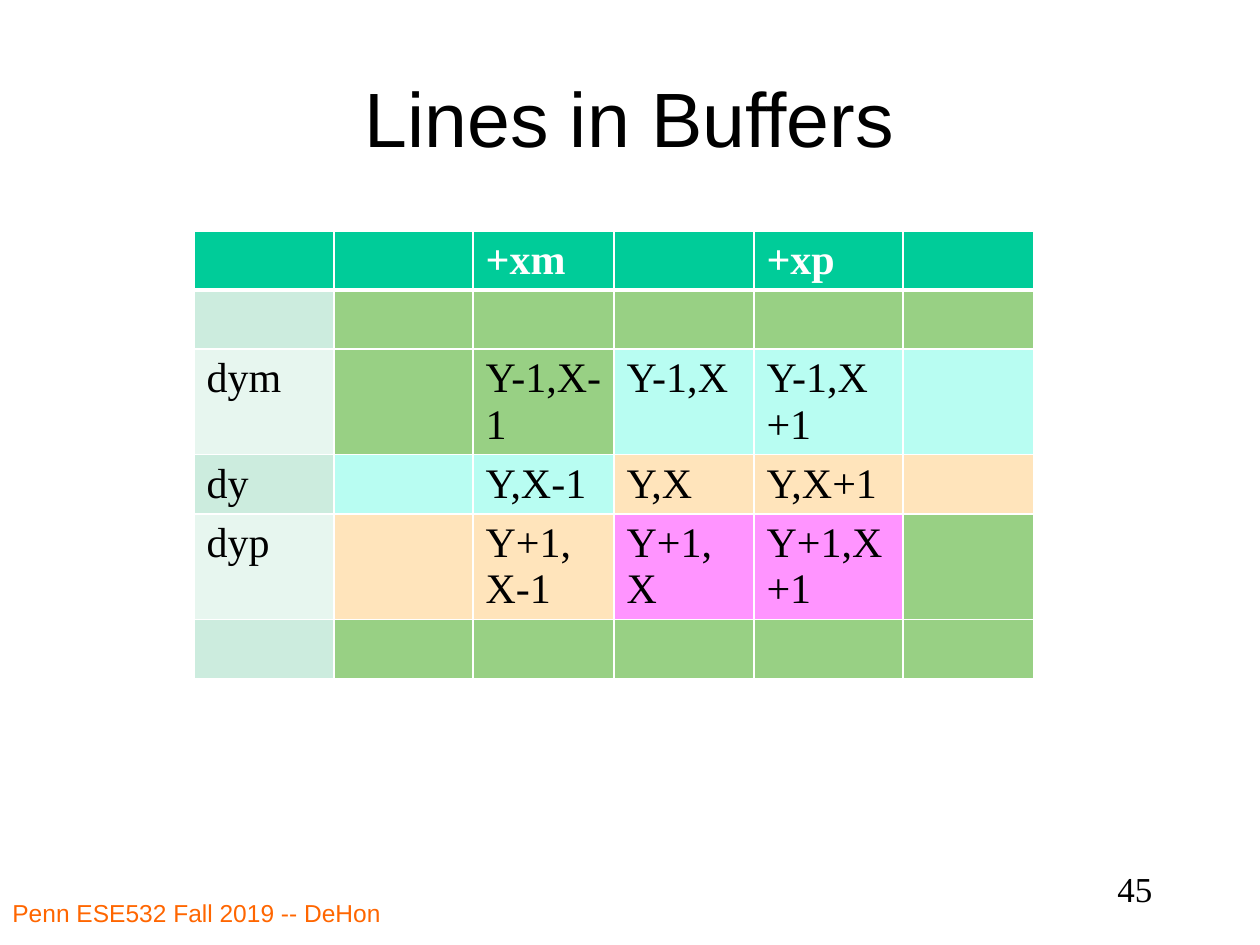
from dataclasses import dataclass

from lxml import etree
from pptx import Presentation
from pptx import util as u
from pptx.dml.color import RGBColor
from pptx.enum import text
from pptx.oxml.ns import qn

EMU_PER_PX = 914400 // 126
COLORS = {
    "black": "000000", "white": "FFFFFF", "orange": "FF6600",
    "head": "00CC99", "dark": "CCECDE", "pale": "E7F6EF",
    "green": "98D084", "aqua": "B8FDF2", "peach": "FFE4BB", "pink": "FF94FF",
}
SANS, SERIF = "Arial", "Times New Roman"


@dataclass(frozen=True)
class Style:
    size: int
    font: str
    color: str = "black"
    bold: bool = False


@dataclass(frozen=True)
class Label:
    words: str
    box: tuple[int, int, int, int]
    style: Style
    align: text.PP_ALIGN


TITLE = Label("Lines in Buffers", (94, 38, 1071, 158), Style(44, SANS), text.PP_ALIGN.CENTER)
LABELS = [
    Label("Penn ESE532 Fall 2019 -- DeHon", (0, 892, 577, 53),
          Style(14, SANS, "orange"), text.PP_ALIGN.LEFT),
    Label("45", (903, 861, 262, 63), Style(20, SERIF), text.PP_ALIGN.RIGHT),
]

# Buffer table: wording, and one fill name per cell
TABLE_LEFT, TABLE_TOP, ROW_HEIGHT = 194, 231, 51
COLUMN_WIDTHS = [140, 139, 141, 140, 149, 131]
WORDS = [
    ["", "", "+xm", "", "+xp", ""],
    [""] * 6,
    ["dym", "", "Y-1,X-1", "Y-1,X", "Y-1,X+1", ""],
    ["dy", "", "Y,X-1", "Y,X", "Y,X+1", ""],
    ["dyp", "", "Y+1,X-1", "Y+1,X", "Y+1,X+1", ""],
    [""] * 6,
]
FILLS = [
    ["head"] * 6,
    ["dark"] + ["green"] * 5,
    ["pale"] + ["green"] * 2 + ["aqua"] * 3,
    ["dark"] + ["aqua"] * 2 + ["peach"] * 3,
    ["pale"] + ["peach"] * 2 + ["pink"] * 2 + ["green"],
    ["dark"] + ["green"] * 5,
]
HEAD_STYLE = Style(24, SERIF, "white", True)
CELL_STYLE = Style(24, SERIF)


def px(length: int) -> u.Emu:
    return u.Emu(length * EMU_PER_PX)


def add_span(para, words: str, style: Style) -> None:
    span = para.add_run()
    span.text = words
    span.font.size = u.Pt(style.size)
    span.font.name = style.font
    span.font.bold = style.bold
    span.font.color.rgb = RGBColor.from_string(COLORS[style.color])


def size_empty(para, style: Style) -> None:
    """Give an empty paragraph the line height of its style."""
    end = etree.SubElement(para._p, qn("a:endParaRPr"), sz=str(style.size * 100))
    etree.SubElement(end, qn("a:latin"), typeface=style.font)


def fill_label(shape, label: Label) -> None:
    shape.left, shape.top, shape.width, shape.height = map(px, label.box)
    frame = shape.text_frame
    frame.word_wrap = True
    frame.auto_size = text.MSO_AUTO_SIZE.NONE
    para = frame.paragraphs[0]
    para.alignment = label.align
    add_span(para, label.words, label.style)


def add_border(cell, side: str, points: int) -> None:
    line = etree.SubElement(cell._tc.get_or_add_tcPr(), qn(f"a:ln{side}"), w=str(u.Pt(points)))
    solid = etree.SubElement(line, qn("a:solidFill"))
    etree.SubElement(solid, qn("a:srgbClr"), val=COLORS["white"])


def add_buffer_table(page) -> None:
    rows, columns = len(WORDS), len(COLUMN_WIDTHS)
    table = page.shapes.add_table(
        rows, columns, px(TABLE_LEFT), px(TABLE_TOP),
        px(sum(COLUMN_WIDTHS)), px(ROW_HEIGHT * rows)).table
    table.first_row = table.horz_banding = False
    for column, width in zip(table.columns, COLUMN_WIDTHS):
        column.width = px(width)

    for r in range(rows):
        style = CELL_STYLE if r else HEAD_STYLE
        # The rule under the heading row is heavier
        borders = {"L": 1, "R": 1, "T": 3 if r == 1 else 1, "B": 1 if r else 3}
        for c in range(columns):
            cell = table.cell(r, c)
            for side, points in borders.items():
                add_border(cell, side, points)
            cell.fill.solid()
            cell.fill.fore_color.rgb = RGBColor.from_string(COLORS[FILLS[r][c]])
            para = cell.text_frame.paragraphs[0]
            if WORDS[r][c]:
                add_span(para, WORDS[r][c], style)
            else:
                size_empty(para, style)


def main() -> None:
    deck = Presentation()
    deck.slide_width, deck.slide_height = px(1260), px(945)
    page = deck.slides.add_slide(deck.slide_layouts.get_by_name("Title Only"))

    # Title, footer and page number
    fill_label(page.shapes.title, TITLE)
    for label in LABELS:
        fill_label(page.shapes.add_textbox(*map(px, label.box)), label)

    add_buffer_table(page)
    deck.save("out.pptx")


if __name__ == "__main__":
    main()
